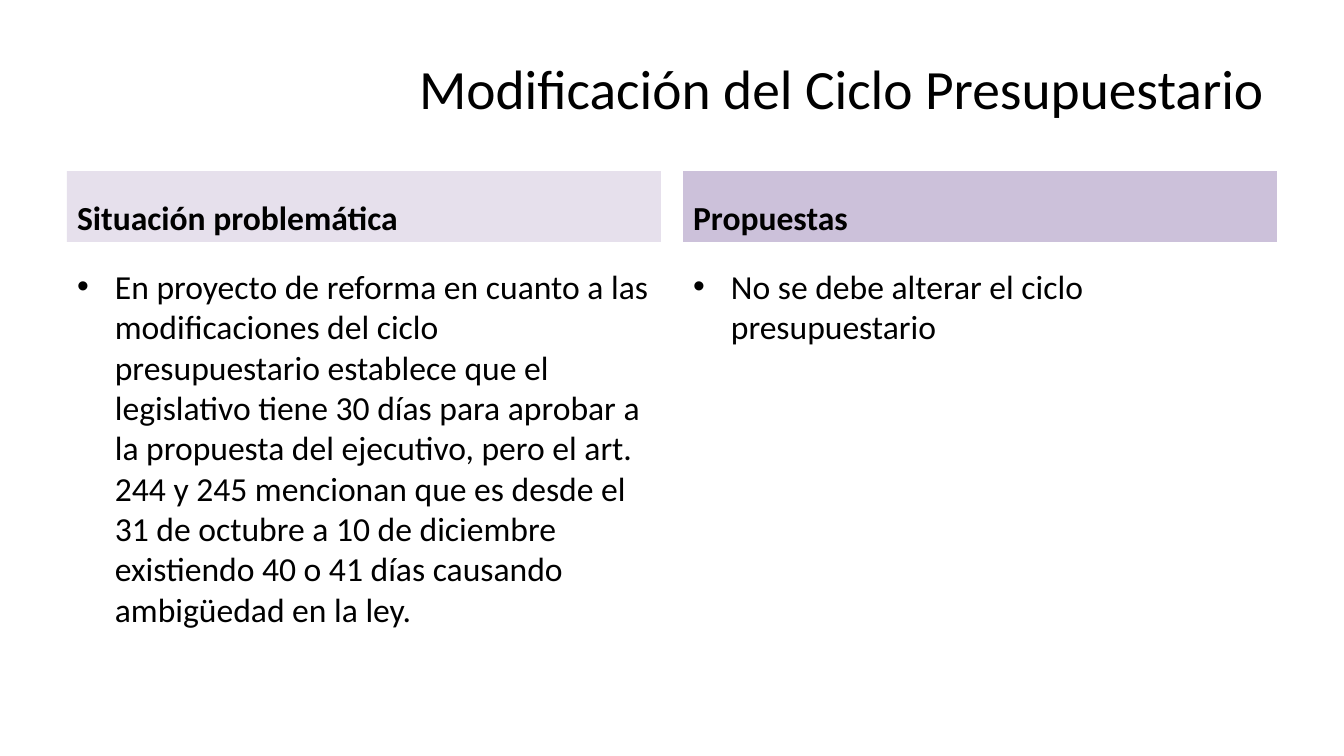
from pptx import Presentation
from pptx.dml.color import RGBColor
from pptx.enum.text import MSO_ANCHOR as ANCHOR, MSO_AUTO_SIZE as AUTO, PP_ALIGN as ALIGN
from pptx.util import Pt

PX = 914400 / 100.8
FONT = "Calibri"
COLORS = {"text": "000000", "problem": "E6E0EC", "proposal": "CCC1DA"}
COMPARISON_LAYOUT = 4


def px(n):
    return round(n * PX)


def rgb(name):
    return RGBColor.from_string(COLORS[name])


def place(s, box):
    s.left, s.top, s.width, s.height = map(px, box)


def write(s, text, size, anchor, align=ALIGN.LEFT, bold=False):
    tf = s.text_frame
    tf.text = text
    tf.word_wrap = True
    tf.auto_size = AUTO.NONE
    tf.vertical_anchor = anchor
    p = tf.paragraphs[0]
    p.alignment = align
    p.space_before = Pt(0)
    p.font.name = FONT
    p.font.size = Pt(size)
    p.font.bold = bold
    p.font.color.rgb = rgb("text")


def add_title(slide, box, text):
    s = slide.shapes.title
    place(s, box)
    write(s, text, 39.6, ANCHOR.MIDDLE, ALIGN.CENTER)


def add_column(slide, box, idx, heading, fill, body):
    left, top, width, height = box
    head_height, gap = 71, 19
    head, content = slide.placeholders[idx], slide.placeholders[idx + 1]

    place(head, (left, top, width, head_height))
    head.fill.solid()
    head.fill.fore_color.rgb = rgb(fill)
    write(head, heading, 24, ANCHOR.BOTTOM, bold=True)

    body_offset = head_height + gap
    place(content, (left, top + body_offset, width, height - body_offset))
    write(content, body, 24, ANCHOR.TOP)


def main():
    prs = Presentation()
    prs.slide_width, prs.slide_height = px(1344), px(756)
    slide = prs.slides.add_slide(prs.slide_layouts[COMPARISON_LAYOUT])

    add_title(slide, (407, 24, 869, 126), "Modificación del Ciclo Presupuestario")
    add_column(
        slide, (67, 171, 594, 504), 1, "Situación problemática", "problem",
        "En proyecto de reforma en cuanto a las modificaciones del ciclo "
        "presupuestario establece que el legislativo tiene 30 días para aprobar "
        "a la propuesta del ejecutivo, pero el art. 244 y 245 mencionan que es "
        "desde el 31 de octubre a 10 de diciembre existiendo 40 o 41 días "
        "causando ambigüedad en la ley.")
    add_column(
        slide, (683, 171, 594, 504), 3, "Propuestas", "proposal",
        "No se debe alterar el ciclo presupuestario")
    prs.save("out.pptx")


if __name__ == "__main__":
    main()
